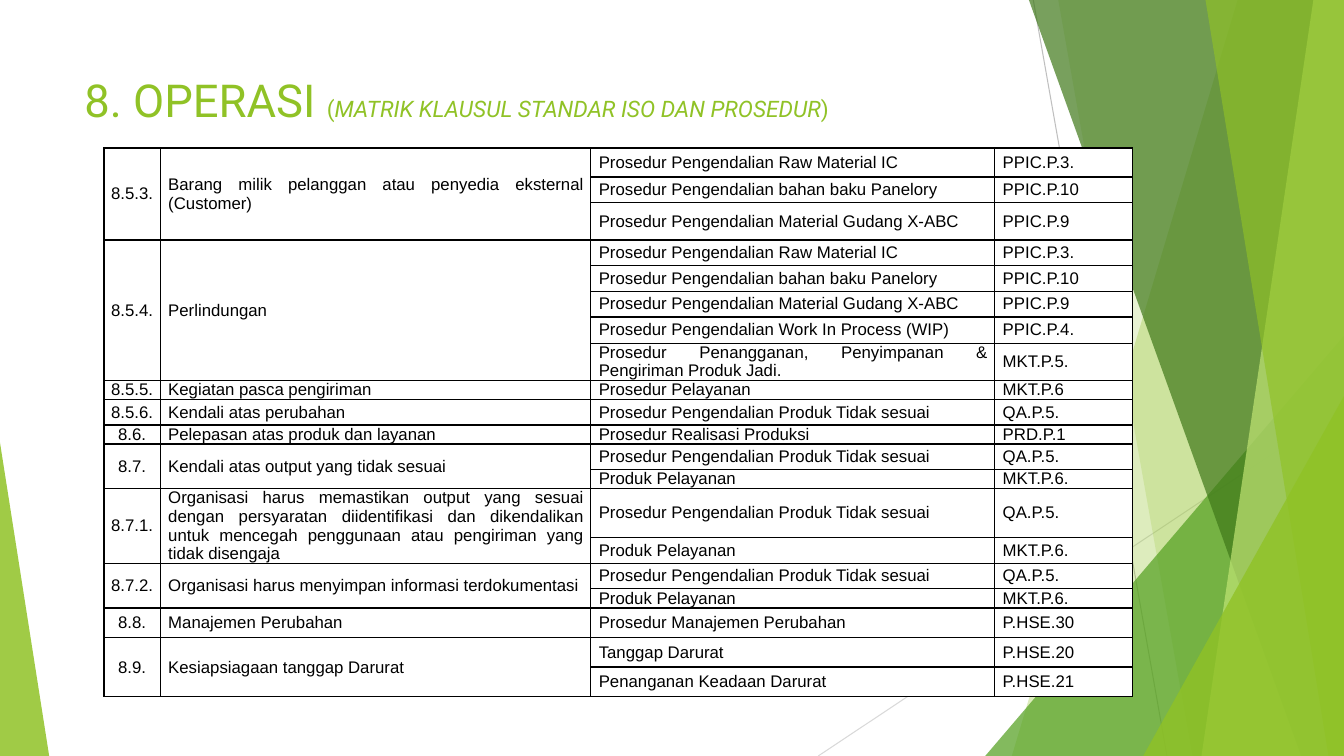
from lxml import etree
from pptx import Presentation
from pptx.dml.color import RGBColor
from pptx.enum import shapes, text
from pptx.oxml import ns
from pptx.util import Cm, Pt

SLIDE_W, SLIDE_H = 33.87, 19.05
GREEN, BLACK, WHITE = "90C226", "000000", "FFFFFF"

# Distance from the right edge at top and bottom, colour, opacity in percent
BACK_BANDS = [(2.68, 8.37, GREEN, 30), (7.2, 3.82, GREEN, 20)]
FRONT_BANDS = [(7.94, 1.08, "3F7819", 70), (0.77, 3.59, "C0E474", 70),
               (3.49, 0.39, GREEN, 65)]

COLUMN_WIDTHS = [1.42, 10.85, 10.18, 3.47]
ROW_HEIGHTS = [0.73, 0.65, 0.92, 0.64, 0.65, 0.65, 0.66, 0.94, 0.48, 0.64,
               0.48, 0.64, 0.48, 1.24, 0.65, 0.64, 0.48, 0.75, 0.74, 0.75]

RAW_MATERIAL = ("Prosedur Pengendalian Raw Material IC", "PPIC.P.3.")
BOARD = ("Prosedur Pengendalian bahan baku Panelory", "PPIC.P.10")
WAREHOUSE = ("Prosedur Pengendalian Material Gudang X-ABC", "PPIC.P.9")
NONCONFORMING = ("Prosedur Pengendalian Produk Tidak sesuai", "QA.P.5.")
SERVICE = ("Produk Pelayanan", "MKT.P.6.")

CLAUSES = [
    ("8.5.3.", "Barang milik pelanggan atau penyedia eksternal (Customer)",
     [RAW_MATERIAL, BOARD, WAREHOUSE]),
    ("8.5.4.", "Perlindungan",
     [RAW_MATERIAL, BOARD, WAREHOUSE,
      ("Prosedur Pengendalian Work In Process (WIP)", "PPIC.P.4."),
      ("Prosedur Penangganan, Penyimpanan & Pengiriman Produk Jadi.", "MKT.P.5.")]),
    ("8.5.5.", "Kegiatan pasca pengiriman", [("Prosedur Pelayanan", "MKT.P.6")]),
    ("8.5.6.", "Kendali atas perubahan", [NONCONFORMING]),
    ("8.6.", "Pelepasan atas produk dan layanan",
     [("Prosedur Realisasi Produksi", "PRD.P.1")]),
    ("8.7.", "Kendali atas output yang tidak sesuai", [NONCONFORMING, SERVICE]),
    ("8.7.1.", "Organisasi harus memastikan output yang sesuai dengan persyaratan "
     "diidentifikasi dan dikendalikan untuk mencegah penggunaan atau pengiriman "
     "yang tidak disengaja", [NONCONFORMING, SERVICE]),
    ("8.7.2.", "Organisasi harus menyimpan informasi terdokumentasi",
     [NONCONFORMING, SERVICE]),
    ("8.8.", "Manajemen Perubahan", [("Prosedur Manajemen Perubahan", "P.HSE.30")]),
    ("8.9.", "Kesiapsiagaan tanggap Darurat",
     [("Tanggap Darurat", "P.HSE.20"), ("Penanganan Keadaan Darurat", "P.HSE.21")]),
]


def rgb(hex_color):
    return RGBColor.from_string(hex_color)


def paint(shape, color, opacity):
    """Give a shape a translucent fill without outline or shadow."""
    shape.shadow.inherit = False
    shape.line.fill.background()
    shape.fill.solid()
    shape.fill.fore_color.rgb = rgb(color)
    srgb = shape._element.spPr.find(ns.qn("a:solidFill")).find(ns.qn("a:srgbClr"))
    etree.SubElement(srgb, ns.qn("a:alpha"), val=str(opacity * 1000))


def add_hairline(slide, start, end, color):
    hairline = slide.shapes.add_connector(
        shapes.MSO_CONNECTOR.STRAIGHT, *[Cm(v) for v in (*start, *end)])
    hairline.line.color.rgb = rgb(color)
    hairline.line.width = Pt(0.75)
    etree.SubElement(hairline._element.spPr, ns.qn("a:effectLst"))


def add_facets(slide, left, top, width, height):
    """Draw the overlapping green facets along both sides of the box."""
    right, bottom = left + width, top + height

    def add_band(top_inset, bottom_inset, color, opacity):
        builder = slide.shapes.build_freeform(Cm(right - top_inset), Cm(top))
        builder.add_line_segments([(Cm(right), Cm(top)), (Cm(right), Cm(bottom)),
                                   (Cm(right - bottom_inset), Cm(bottom))])
        paint(builder.convert_to_shape(), color, opacity)

    def add_corner(x, w, h, apex, color, opacity):
        corner = slide.shapes.add_shape(
            shapes.MSO_SHAPE.ISOSCELES_TRIANGLE,
            Cm(x), Cm(bottom - h), Cm(w), Cm(h))
        corner.adjustments[0] = apex
        paint(corner, color, opacity)

    add_hairline(slide, (right - 7.83, top), (right - 4.46, bottom), "BFBFBF")
    add_hairline(slide, (right, top + 10.24), (right - 13.25, bottom), "D9D9D9")
    for band in BACK_BANDS:
        add_band(*band)
    add_corner(right - 9.04, 9.04, 10.59, 1, "54A021", 72)
    for band in FRONT_BANDS:
        add_band(*band)
    add_corner(right - 5.06, 5.06, 9.07, 1, GREEN, 80)
    add_corner(left, 1.24, 7.9, 0, GREEN, 85)


def add_title(slide, left, top, width, height):
    frame = slide.shapes.add_textbox(
        Cm(left), Cm(top), Cm(width), Cm(height)).text_frame
    frame.word_wrap = True
    frame.vertical_anchor = text.MSO_ANCHOR.MIDDLE
    heading = frame.paragraphs[0]
    heading.font.name = "Roboto"
    heading.font.color.rgb = rgb(GREEN)
    for words, size, italic in [
            ("8. OPERASI ", 32.4, False), ("(", 16.2, False),
            ("MATRIK KLAUSUL STANDAR ISO DAN PROSEDUR", 16.2, True),
            (")", 16.2, False)]:
        run = heading.add_run()
        run.text = words
        run.font.size = Pt(size)
        run.font.italic = italic


def style_cell(cell, centred):
    cell.margin_left = cell.margin_right = cell.margin_top = cell.margin_bottom = 0
    cell.vertical_anchor = text.MSO_ANCHOR.MIDDLE
    tc_pr = cell._tc.get_or_add_tcPr()
    for side in ("lnL", "lnR", "lnT", "lnB"):
        border = etree.SubElement(tc_pr, ns.qn("a:" + side), w=str(Pt(1)))
        solid = etree.SubElement(border, ns.qn("a:solidFill"))
        etree.SubElement(solid, ns.qn("a:srgbClr"), val=BLACK)
    cell.fill.solid()
    cell.fill.fore_color.rgb = rgb(WHITE)
    words = cell.text_frame.paragraphs[0]
    words.line_spacing = Pt(13.3)
    words.font.name = "Arial"
    words.font.size = Pt(12)
    words.font.color.rgb = rgb(BLACK)
    if centred:
        words.alignment = text.PP_ALIGN.CENTER
    else:
        words.alignment = text.PP_ALIGN.JUSTIFY
        indent = words._p.get_or_add_pPr()
        indent.set("marL", str(Cm(0.2)))
        indent.set("marR", str(Cm(0.17)))


def add_clause_matrix(slide, left, top):
    """Place the table; clause cells span the rows of their procedures."""
    matrix = slide.shapes.add_table(
        len(ROW_HEIGHTS), len(COLUMN_WIDTHS), Cm(left), Cm(top),
        Cm(sum(COLUMN_WIDTHS)), Cm(sum(ROW_HEIGHTS))).table
    matrix.first_row = matrix.horz_banding = False
    for column, width in zip(matrix.columns, COLUMN_WIDTHS):
        column.width = Cm(width)
    for row, height in zip(matrix.rows, ROW_HEIGHTS):
        row.height = Cm(height)

    first = 0
    for number, requirement, procedures in CLAUSES:
        last = first + len(procedures) - 1
        for col, words in enumerate((number, requirement)):
            matrix.cell(first, col).text = words
            if last > first:
                matrix.cell(first, col).merge(matrix.cell(last, col))
        for row, procedure in enumerate(procedures, first):
            for col, words in enumerate(procedure, 2):
                matrix.cell(row, col).text = words
        first = last + 1

    for row in range(len(ROW_HEIGHTS)):
        for col in range(len(COLUMN_WIDTHS)):
            style_cell(matrix.cell(row, col), centred=col == 0)


def main():
    deck = Presentation()
    deck.slide_width, deck.slide_height = Cm(SLIDE_W), Cm(SLIDE_H)
    slide = deck.slides.add_slide(deck.slide_layouts[6])
    add_facets(slide, 0, 0, SLIDE_W, SLIDE_H)
    add_title(slide, 1.88, 1.65, 23.88, 1.73)
    add_clause_matrix(slide, 2.62, 3.73)
    deck.save("out.pptx")


if __name__ == "__main__":
    main()
